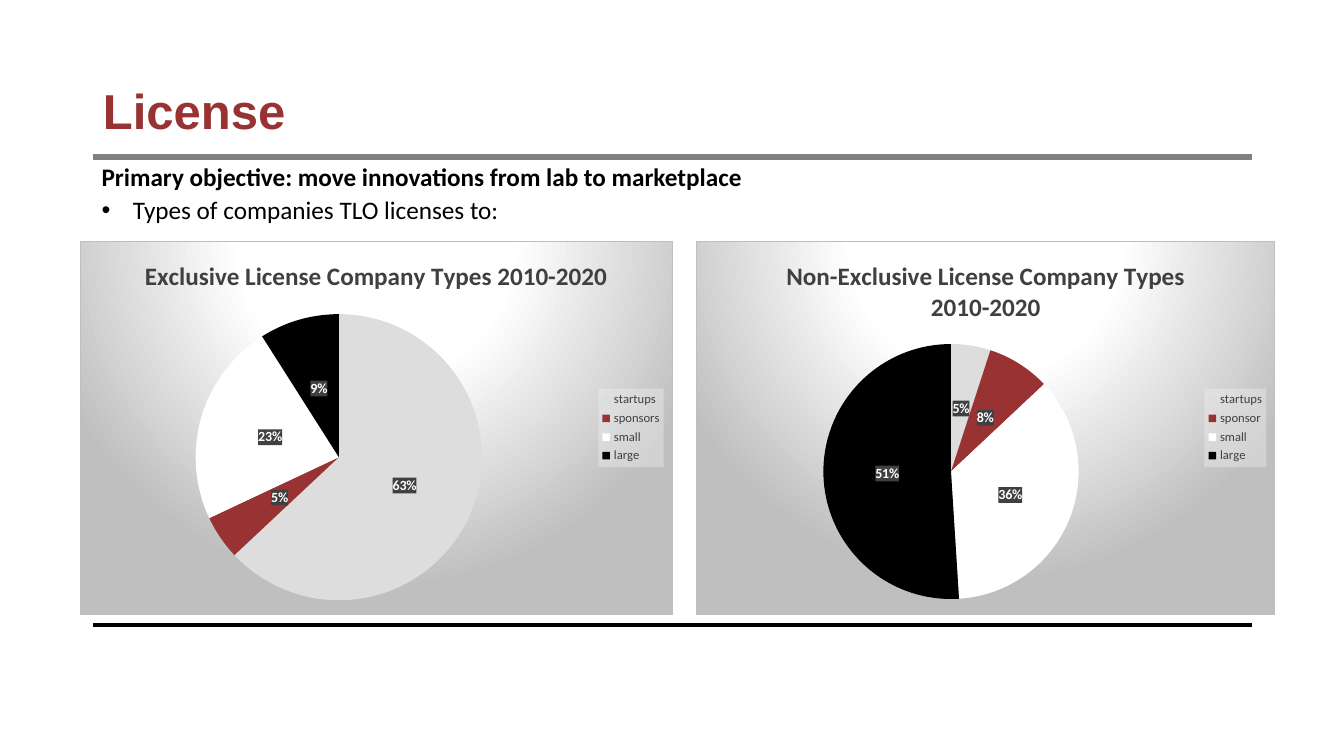
from lxml.etree import SubElement
from pptx import Presentation
from pptx.chart.data import CategoryChartData
from pptx.dml.color import RGBColor
from pptx.enum.chart import XL_CHART_TYPE, XL_LABEL_POSITION, XL_LEGEND_POSITION
from pptx.enum.shapes import MSO_CONNECTOR
from pptx.enum.text import MSO_ANCHOR, PP_ALIGN
from pptx.oxml import parse_xml
from pptx.oxml.ns import nsdecls, qn
from pptx.util import Cm, Pt

COLORS = {
    "red": "993333", "black": "000000", "white": "FFFFFF", "rule": "808080",
    "startup": "DDDDDD", "dark": "404040", "edge": "BFBFBF", "legend": "F2F2F2",
}
SLICES = ["startup", "red", "white", "black"]
TITLE = "License"
OBJECTIVE = "Primary objective: move innovations from lab to marketplace"
BULLET = "Types of companies TLO licenses to:"
RULES = [(15.75, "black", 3.25), (3.96, "rule", 4.75)]
RULE_LEFT, RULE_RIGHT = 2.34, 31.55
CHART_TOP, CHART_HEIGHT = 6.07, 9.42
CHARTS = [
    {"title": "Exclusive License Company Types 2010-2020",
     "left": 2.01, "width": 14.94, "pie": (2.92, 1.84, 7.23),
     "shares": {"startups": 63, "sponsors": 5, "small": 23, "large": 9}},
    {"title": "Non-Exclusive License Company Types 2010-2020",
     "left": 17.55, "width": 14.58, "pie": (3.19, 2.59, 6.45),
     "shares": {"startups": 5, "sponsor": 8, "small": 36, "large": 51}},
]


def color(name):
    return RGBColor.from_string(COLORS[name])


def style(font, size, name, bold=False, face="Calibri"):
    font.size, font.bold, font.name = Pt(size), bold, face
    font.color.rgb = color(name)


def write(frame, text, size=18, name="black", bold=False, face="Calibri", bullet=False):
    frame.word_wrap = True
    para = frame.paragraphs[0]
    para.alignment = PP_ALIGN.LEFT
    if bullet:
        properties = para._p.get_or_add_pPr()
        properties.set("marL", str(Cm(0.79)))
        properties.set("indent", str(-Cm(0.79)))
        SubElement(properties, qn("a:buFont")).set("typeface", "Arial")
        SubElement(properties, qn("a:buChar")).set("char", "•")
    span = para.add_run()
    span.text = text
    style(span.font, size, name, bold, face)
    return para


def clear_fill(name, alpha):
    return (f'<a:solidFill><a:srgbClr val="{COLORS[name]}">'
            f'<a:alpha val="{alpha * 1000}"/></a:srgbClr></a:solidFill>')


def paint(parent, content):
    parent.find(qn("c:txPr")).addprevious(
        parse_xml(f'<c:spPr {nsdecls("c", "a")}>{content}</c:spPr>'))


def chart_background():
    stops = "".join(f'<a:gs pos="{position * 1000}"><a:srgbClr val="{COLORS[name]}"/></a:gs>'
                    for position, name in [(0, "white"), (39, "white"), (100, "edge")])
    return (f'<a:gradFill><a:gsLst>{stops}</a:gsLst><a:path path="circle">'
            '<a:fillToRect l="50000" t="-80000" r="50000" b="180000"/></a:path></a:gradFill>'
            f'<a:ln w="{Pt(0.75)}"><a:solidFill><a:srgbClr val="{COLORS["edge"]}"/>'
            '</a:solidFill></a:ln>')


def place_pie(chart, left, top, size, width):
    plot_area = chart._chartSpace.chart.plotArea
    for old in plot_area.findall(qn("c:layout")):
        plot_area.remove(old)
    shares = {"x": left / width, "y": top / CHART_HEIGHT,
              "w": size / width, "h": size / CHART_HEIGHT}
    values = "".join(f'<c:{key} val="{share:.3f}"/>' for key, share in shares.items())
    plot_area.insert(0, parse_xml(
        f'<c:layout {nsdecls("c")}><c:manualLayout><c:layoutTarget val="inner"/>'
        f'<c:xMode val="edge"/><c:yMode val="edge"/>{values}</c:manualLayout></c:layout>'))


def add_pie(page, title, left, width, pie, shares):
    data = CategoryChartData()
    data.categories = list(shares)
    data.add_series("Series 1", list(shares.values()))
    chart = page.shapes.add_chart(XL_CHART_TYPE.PIE, Cm(left), Cm(CHART_TOP),
                                  Cm(width), Cm(CHART_HEIGHT), data).chart
    style(chart.font, 10, "black")
    paint(chart._chartSpace, chart_background())
    place_pie(chart, *pie, width)

    chart.has_title = True
    heading = chart.chart_title.text_frame
    heading.text = title
    style(heading.paragraphs[0].runs[0].font, 18, "dark", bold=True)

    chart.has_legend = True
    chart.legend.position = XL_LEGEND_POSITION.RIGHT
    chart.legend.include_in_layout = False
    style(chart.legend.font, 9, "dark")
    paint(chart.legend._element, clear_fill("legend", 39))

    plot = chart.plots[0]
    plot.vary_by_categories = True
    for index, name in enumerate(SLICES):
        fill = plot.series[0].points[index].format.fill
        fill.solid()
        fill.fore_color.rgb = color(name)

    labels = plot.series[0].data_labels
    style(labels.font, 10, "white", bold=True)
    labels.show_percentage, labels.show_value = True, False
    labels.position = XL_LABEL_POSITION.CENTER
    paint(labels._element, clear_fill("dark", 90))


def main():
    deck = Presentation()
    deck.slide_width, deck.slide_height = Cm(33.87), Cm(19.05)
    page = deck.slides.add_slide(deck.slide_layouts[5])

    for height, name, weight in RULES:
        rule = page.shapes.add_connector(MSO_CONNECTOR.STRAIGHT, Cm(RULE_LEFT), Cm(height),
                                         Cm(RULE_RIGHT), Cm(height))
        rule.line.color.rgb = color(name)
        rule.line.width = Pt(weight)
        SubElement(rule._element.spPr, qn("a:effectLst"))

    title = page.shapes.title
    title.left, title.top = Cm(RULE_LEFT), Cm(1.02)
    title.width, title.height = Cm(RULE_RIGHT - RULE_LEFT), Cm(3.68)
    title.text_frame.vertical_anchor = MSO_ANCHOR.MIDDLE
    write(title.text_frame, TITLE, size=35, name="red", bold=True, face="Arial").line_spacing = 0.9

    for text, top, width, is_bullet in [(OBJECTIVE, 3.94, 25.76, False),
                                        (BULLET, 4.78, 28.3, True)]:
        box = page.shapes.add_textbox(Cm(2.31), Cm(top), Cm(width), Cm(1.02))
        write(box.text_frame, text, bold=not is_bullet, bullet=is_bullet)

    for chart in CHARTS:
        add_pie(page, **chart)
    deck.save("out.pptx")


if __name__ == "__main__":
    main()
